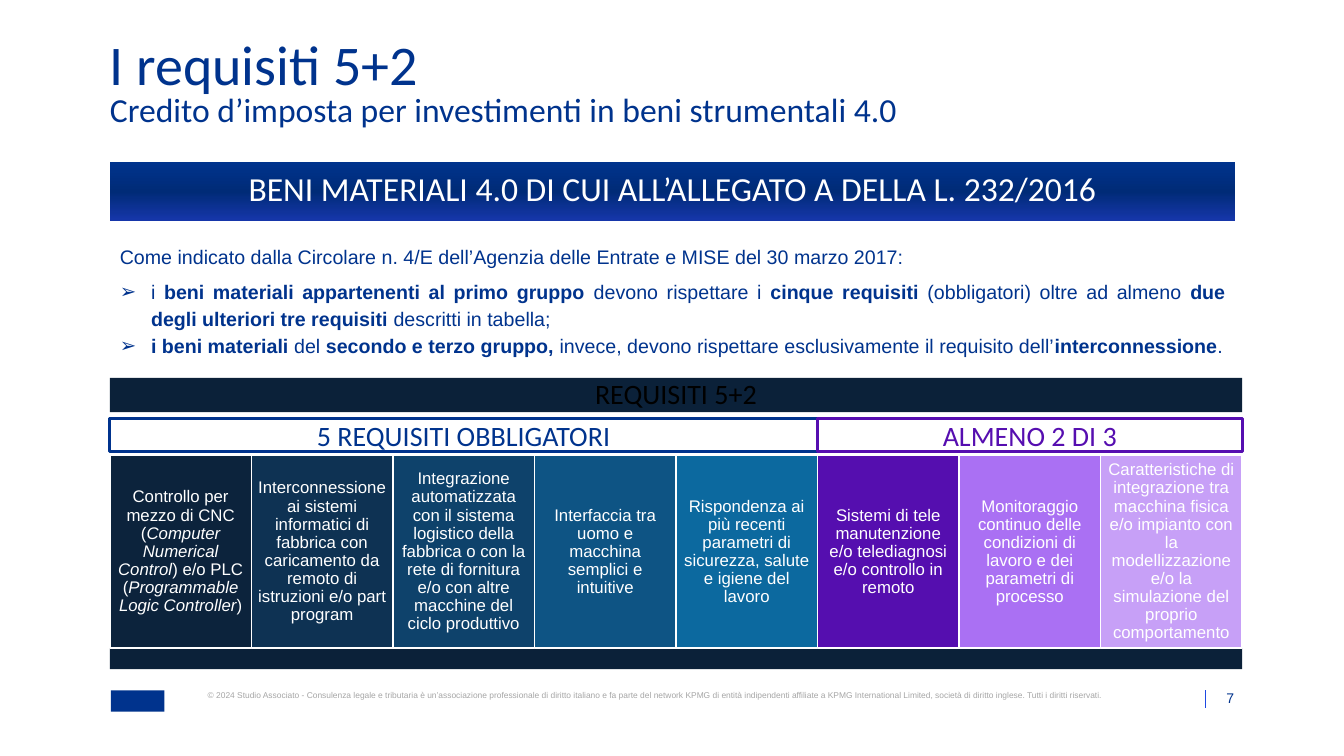
from copy import deepcopy

from lxml import etree
from pptx import Presentation
from pptx.dml.color import RGBColor
from pptx.enum.shapes import MSO_CONNECTOR, MSO_SHAPE
from pptx.enum.text import MSO_ANCHOR, PP_ALIGN
from pptx.oxml.ns import qn
from pptx.util import Inches, Pt

LEFT, CENTER, RIGHT, JUSTIFY = PP_ALIGN.LEFT, PP_ALIGN.CENTER, PP_ALIGN.RIGHT, PP_ALIGN.JUSTIFY
TOP, MIDDLE, BOTTOM = MSO_ANCHOR.TOP, MSO_ANCHOR.MIDDLE, MSO_ANCHOR.BOTTOM
RECTANGLE, STRAIGHT = MSO_SHAPE.RECTANGLE, MSO_CONNECTOR.STRAIGHT

BLUE = RGBColor(0x00, 0x33, 0x8D)
DEEP_BLUE = RGBColor(0x00, 0x2B, 0x77)
BRIGHT_BLUE = RGBColor(0x16, 0x36, 0xAA)
RULE_BLUE = RGBColor(0x1E, 0x49, 0xE2)
NAVY = RGBColor(0x0B, 0x21, 0x39)
PURPLE = RGBColor(0x56, 0x0E, 0xB0)
GREY = RGBColor(0xA6, 0xA6, 0xA6)
BLACK = RGBColor(0x00, 0x00, 0x00)
WHITE = RGBColor(0xFF, 0xFF, 0xFF)

MARGIN = 1.09
CONTENT_WIDTH = 11.16
TABLE_WIDTH = 11.23
COLUMN_WIDTH = TABLE_WIDTH / 8

deck = Presentation()
deck.slide_width, deck.slide_height = Inches(13.33), Inches(7.5)
page = deck.slides.add_slide(deck.slide_layouts[6])


def add_rectangle(left, top, width, height, fill=None, line=None, line_width=1):
    box = page.shapes.add_shape(RECTANGLE, Inches(left), Inches(top), Inches(width), Inches(height))
    box.shadow.inherit = False
    if fill is None:
        box.fill.background()
    else:
        box.fill.solid()
        box.fill.fore_color.rgb = fill
    if line is None:
        box.line.fill.background()
    else:
        box.line.color.rgb = line
        box.line.width = Pt(line_width)
    return box


def write(box, text, size, color, font="Arial", align=CENTER, anchor=TOP, inset=(0, 0),
          spacing=None, after=0, emphasis="bold", bullet=None):
    """Fill a box, one paragraph per line; parts between asterisks get the emphasis.

    The bullet, if given, marks every paragraph after the first.
    """
    frame = box.text_frame
    frame.word_wrap = True
    frame.vertical_anchor = anchor
    frame.margin_left = frame.margin_right = Inches(inset[0])
    frame.margin_top = frame.margin_bottom = Inches(inset[1])
    for index, line in enumerate(text.split("\n")):
        para = frame.paragraphs[0] if index == 0 else frame.add_paragraph()
        para.alignment = align
        para.line_spacing = spacing
        para.space_after = Pt(after if index == 0 else 0)
        if bullet and index:
            properties = para._p.get_or_add_pPr()
            properties.set("marL", str(Inches(0.31)))
            properties.set("indent", str(-Inches(0.31)))
            etree.SubElement(properties, qn("a:buFont")).set("typeface", "Arial")
            etree.SubElement(properties, qn("a:buChar")).set("char", bullet)
        for part, words in enumerate(line.split("*")):
            if words:
                span = para.add_run()
                span.text = words
                span.font.name, span.font.size = font, Pt(size)
                span.font.color.rgb = color
                if part % 2:
                    setattr(span.font, emphasis, True)


# Headings
for heading, top, height, size in [
    ("I requisiti 5+2", 0.47, 0.58, 40),
    ("Credito d’imposta per investimenti in beni strumentali 4.0", 0.99, 0.33, 24),
]:
    box = page.shapes.add_textbox(Inches(MARGIN), Inches(top), Inches(CONTENT_WIDTH), Inches(height))
    write(box, heading, size, BLUE, font="Calibri", align=LEFT, spacing=0.7)

# Gradient banner
banner = add_rectangle(MARGIN, 1.61, CONTENT_WIDTH, 0.58)
banner.fill.gradient()
banner.fill.gradient_angle = 270
stop_list = banner._element.spPr.find(qn("a:gradFill")).find(qn("a:gsLst"))
stop_list.insert(1, deepcopy(stop_list[0]))
for stop, position, color in zip(banner.fill.gradient_stops, (0, 0.5, 1),
                                 (BLUE, DEEP_BLUE, BRIGHT_BLUE)):
    stop.position = position
    stop.color.rgb = color
write(banner, "BENI MATERIALI 4.0 DI CUI ALL’ALLEGATO A DELLA L. 232/2016", 24, WHITE,
      font="Calibri", inset=(0.06, 0.06))

# Introduction
introduction = page.shapes.add_textbox(Inches(MARGIN), Inches(2.35), Inches(CONTENT_WIDTH), Inches(1.24))
write(introduction,
      "Come indicato dalla Circolare n. 4/E dell’Agenzia delle Entrate e MISE del 30 marzo 2017:\n"
      "i *beni materiali appartenenti al primo gruppo* devono rispettare i *cinque requisiti "
      "*(obbligatori) oltre ad almeno *due degli ulteriori tre requisiti *descritti in tabella;\n"
      "*i beni materiali* del *secondo e terzo gruppo, *invece, devono rispettare "
      "esclusivamente il requisito dell’*interconnessione*.",
      14, BLUE, align=JUSTIFY, inset=(0.1, 0.05), spacing=1.14, after=6, bullet="➢")

# Requirement bands
header = add_rectangle(MARGIN, 3.75, TABLE_WIDTH, 0.34, fill=NAVY)
write(header, "REQUISITI 5+2", 20, BLACK, font="Calibri", anchor=MIDDLE, spacing=0.9)
add_rectangle(MARGIN, 6.43, TABLE_WIDTH, 0.21, fill=NAVY)

# Requirement columns
requirements = [
    ("0C233C", "Controllo per mezzo di CNC (*Computer Numerical Control*) e/o PLC "
               "(*Programmable Logic Controller*)"),
    ("0E3253", "Interconnessione ai sistemi informatici di fabbrica con caricamento da remoto "
               "di istruzioni e/o part program"),
    ("0E426B", "Integrazione automatizzata con il sistema logistico della fabbrica o con la rete "
               "di fornitura e/o con altre macchine del ciclo produttivo"),
    ("0E5484", "Interfaccia tra uomo e macchina semplici e intuitive"),
    ("0C699F", "Rispondenza ai più recenti parametri di sicurezza, salute e igiene del lavoro"),
    ("550EAF", "Sistemi di tele manutenzione e/o telediagnosi e/o controllo in remoto"),
    ("AA70F3", "Monitoraggio continuo delle condizioni di lavoro e dei parametri di processo"),
    ("C7A0F7", "Caratteristiche di integrazione tra macchina fisica e/o impianto con la "
               "modellizzazione e/o la simulazione del proprio comportamento"),
]
for column, (fill, requirement) in enumerate(requirements):
    card = add_rectangle(MARGIN + column * COLUMN_WIDTH, 4.52, COLUMN_WIDTH, 1.91,
                         fill=RGBColor.from_string(fill), line=WHITE)
    write(card, requirement, 12, WHITE, anchor=MIDDLE, inset=(0.05, 0.05), spacing=0.9,
          emphasis="italic")

# Group labels over the columns
for label, first_column, columns, color in [
    ("5 REQUISITI OBBLIGATORI", 0, 5, BLUE),
    ("ALMENO 2 DI 3", 5, 3, PURPLE),
]:
    group = add_rectangle(MARGIN + first_column * COLUMN_WIDTH, 4.15, columns * COLUMN_WIDTH, 0.33,
                          line=color, line_width=2.25)
    write(group, label, 20, color, font="Calibri")

# Footer
add_rectangle(1.1, 6.85, 0.53, 0.21, fill=BLUE)
copyright_line = page.shapes.add_textbox(Inches(2.06), Inches(6.85), Inches(8.96), Inches(0.1))
write(copyright_line,
      "© 2024 Studio Associato - Consulenza legale e tributaria è un’associazione professionale di "
      "diritto italiano e fa parte del network KPMG di entità indipendenti affiliate a KPMG "
      "International Limited, società di diritto inglese. Tutti i diritti riservati.",
      6, GREY, align=LEFT)
divider = page.shapes.add_connector(STRAIGHT, Inches(11.95), Inches(6.85), Inches(11.95), Inches(7.02))
divider.line.color.rgb = RULE_BLUE
divider.line.width = Pt(0.5)
etree.SubElement(divider._element.spPr, qn("a:effectLst"))
page_number = page.shapes.add_textbox(Inches(11.97), Inches(6.85), Inches(0.27), Inches(0.16))
write(page_number, "7", 10, BLUE, align=RIGHT, anchor=BOTTOM)

deck.save("out.pptx")
